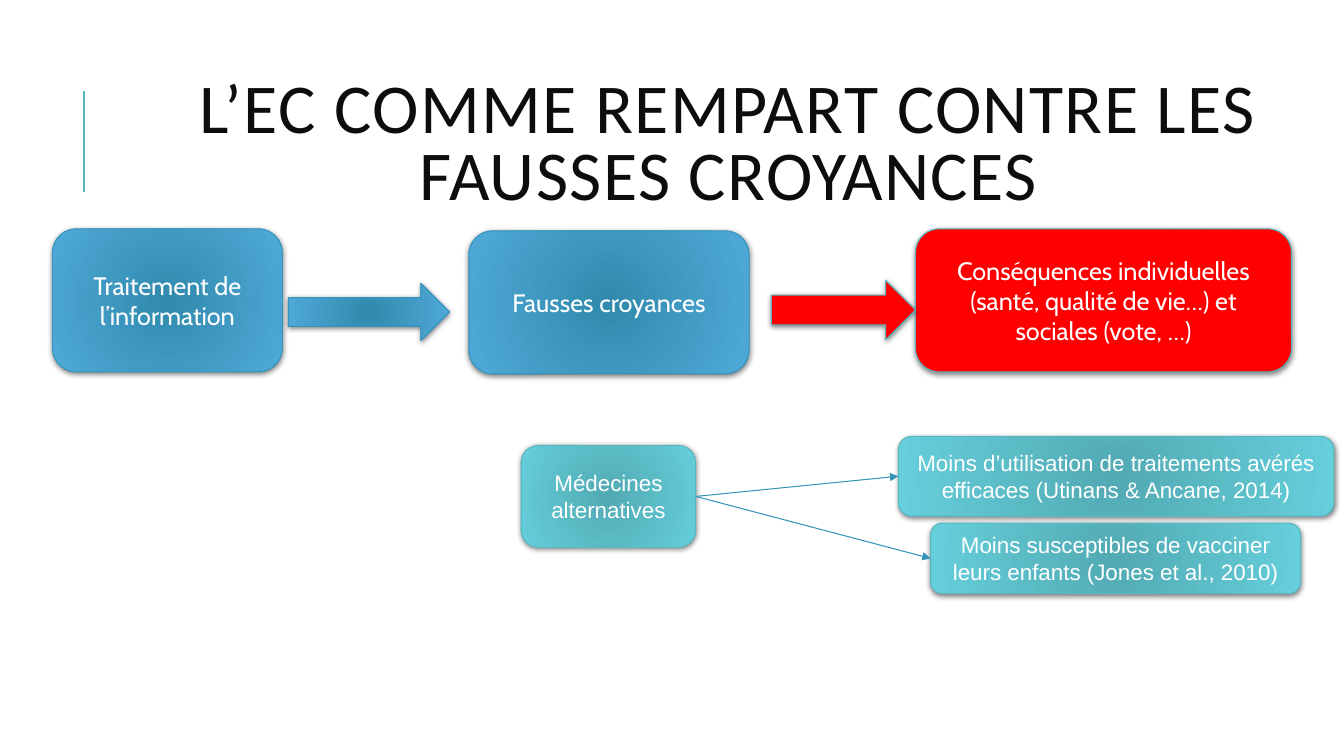
from pptx import Presentation
from pptx.dml.color import RGBColor
from pptx.enum.shapes import MSO_CONNECTOR, MSO_SHAPE
from pptx.enum.text import MSO_ANCHOR, PP_ALIGN
from pptx.oxml import parse_xml
from pptx.oxml.ns import nsdecls, qn
from pptx.util import Pt

PX = 9144  # 100 px to the inch
STRAIGHT = MSO_CONNECTOR.STRAIGHT
BOX, ARROW = MSO_SHAPE.ROUNDED_RECTANGLE, MSO_SHAPE.RIGHT_ARROW
CENTER, MIDDLE = PP_ALIGN.CENTER, MSO_ANCHOR.MIDDLE
RIGHT_SIDE, LEFT_SIDE = 3, 1

THEME = {
    "blue": {"fill": ("308AAD", "50AAD9"), "line": "3494BA", "font": "Cabin", "size": 18},
    "red": {"fill": ("FF0000",), "line": "58B6C0", "font": "Cabin", "size": 18},
    "teal": {"fill": ("52AAB3", "65CFDB"), "line": "58B6C0", "font": "Arial", "size": 16},
    "title": {"color": "0D0D0D", "font": "Calibri", "size": 50},
    "label": "FFFFFF",
    "rule": "58B6C0",
    "link": "3494BA",
}


def add_block(preset, style_name, box, label=""):
    """Add a shadowed shape; two fill colours give a radial gradient."""
    style = THEME[style_name]
    block = slide.shapes.add_shape(preset, *[n * PX for n in box])
    colors = [RGBColor.from_string(c) for c in style["fill"]]
    if len(colors) == 1:
        block.fill.solid()
        block.fill.fore_color.rgb = colors[0]
    else:
        block.fill.gradient()
        for stop, color in zip(block.fill.gradient_stops, colors):
            stop.color.rgb = color
        gradient = block._element.spPr.find(qn("a:gradFill"))
        gradient.remove(gradient.find(qn("a:lin")))
        gradient.append(parse_xml(
            f'<a:path {nsdecls("a")} path="circle"><a:fillToRect l="100000" '
            't="100000" r="100000" b="100000"/></a:path>'))
    block.line.color.rgb = RGBColor.from_string(style["line"])
    block.line.width = Pt(0.75)
    block.shadow.inherit = False
    block._element.spPr.find(qn("a:effectLst")).append(parse_xml(
        f'<a:outerShdw {nsdecls("a")} blurRad="50800" dist="12700" dir="5400000" '
        'rotWithShape="0"><a:srgbClr val="000000"><a:alpha val="50000"/>'
        '</a:srgbClr></a:outerShdw>'))
    if label:
        block.text_frame.word_wrap = True
        block.text_frame.vertical_anchor = MIDDLE
        paragraph = block.text_frame.paragraphs[0]
        paragraph.text = label
        paragraph.alignment = CENTER
        paragraph.font.name = style["font"]
        paragraph.font.size = Pt(style["size"])
        paragraph.font.color.rgb = RGBColor.from_string(THEME["label"])
    return block


def add_line(start, end, color, width):
    line = slide.shapes.add_connector(STRAIGHT, *[n * PX for n in (*start, *end)])
    line.line.color.rgb = RGBColor.from_string(color)
    line.line.width = Pt(width)
    line._element.spPr.append(parse_xml(f'<a:effectLst {nsdecls("a")}/>'))
    return line


prs = Presentation()
prs.slide_width, prs.slide_height = 1333 * PX, 750 * PX
slide = prs.slides.add_slide(prs.slide_layouts[6])

# Title
add_line((83, 190), (83, 90), THEME["rule"], 1.5)
title = slide.shapes.add_textbox(*[n * PX for n in (112, 64, 1221, 164)])
title.text_frame.word_wrap = True
title.text_frame.vertical_anchor = MIDDLE
heading = title.text_frame.paragraphs[0]
heading.alignment = CENTER
heading.line_spacing = 0.8
heading.font.name = THEME["title"]["font"]
heading.font.size = Pt(THEME["title"]["size"])
heading.font.color.rgb = RGBColor.from_string(THEME["title"]["color"])
heading_run = heading.add_run()
heading_run.text = "L’EC COMME REMPART CONTRE LES FAUSSES CROYANCES"
heading_run._r.get_or_add_rPr().set("spc", "100")

# Main chain, from information to consequences
add_block(BOX, "blue", (52, 227, 228, 142), "Traitement de l’information")
add_block(BOX, "blue", (465, 229, 278, 142), "Fausses croyances")
add_block(ARROW, "blue", (286, 281, 160, 57))
add_block(BOX, "red", (908, 227, 373, 142),
          "Conséquences individuelles (santé, qualité de vie…) et sociales (vote, …)")
add_block(ARROW, "red", (765, 278, 143, 59))

# Example: alternative medicine and its effects
medicine = add_block(BOX, "teal", (517, 442, 173, 101), "Médecines alternatives")
effects = [
    ((891, 433, 432, 79),
     "Moins d’utilisation de traitements avérés efficaces (Utinans & Ancane, 2014)"),
    ((923, 519, 367, 70),
     "Moins susceptibles de vacciner leurs enfants (Jones et al., 2010)"),
]
for box, label in effects:
    effect = add_block(BOX, "teal", box, label)
    link = add_line((690, 492), box[:2], THEME["link"], 0.75)
    link.begin_connect(medicine, RIGHT_SIDE)
    link.end_connect(effect, LEFT_SIDE)
    link.line._get_or_add_ln().append(
        parse_xml(f'<a:tailEnd {nsdecls("a")} type="triangle"/>'))

prs.save("out.pptx")
